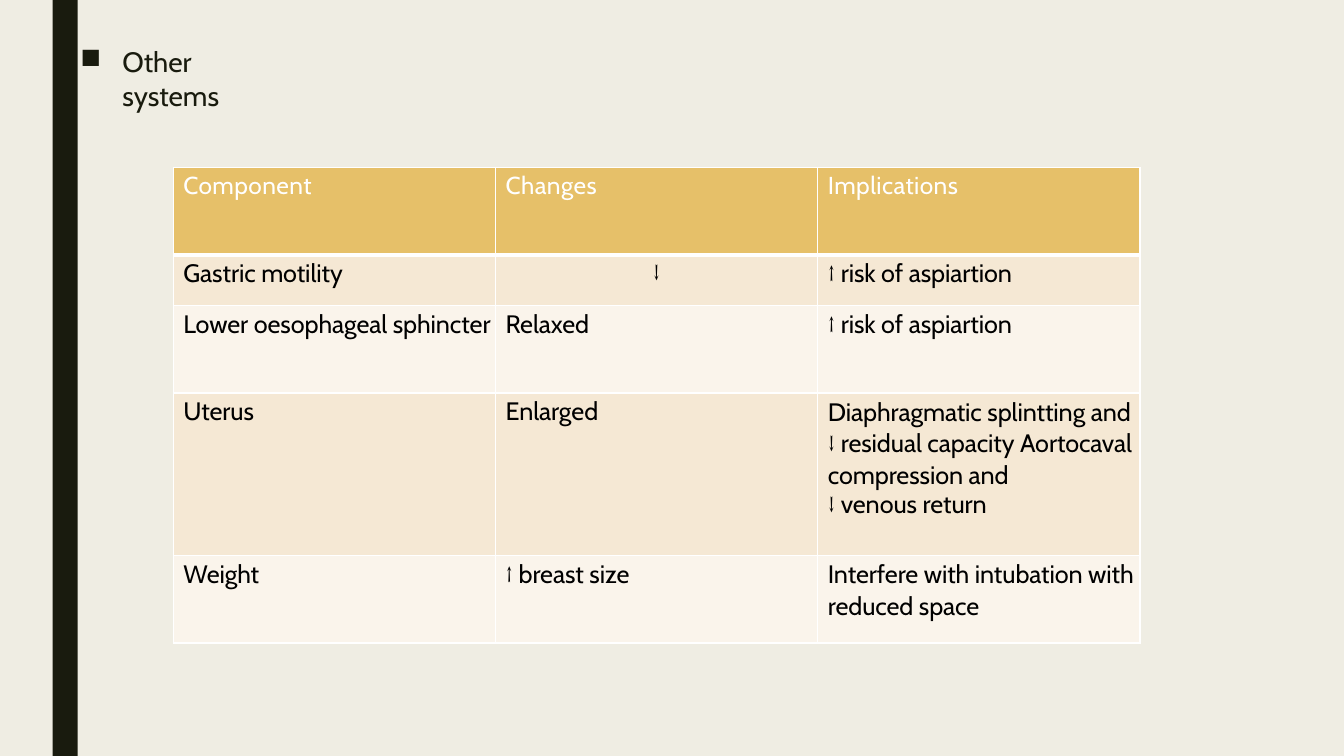
"""Build a slide with a table of changes in other body systems."""
from itertools import groupby
from lxml.etree import SubElement
from pptx import Presentation
from pptx.dml.color import RGBColor
from pptx.enum.shapes import MSO_SHAPE
from pptx.enum.text import PP_ALIGN
from pptx.oxml.ns import qn
from pptx.util import Pt

HUES = {"paper": "EFEDE3", "dark": "191B0E", "gold": "E6C069", "sand": "F5E8D4",
        "cream": "FAF4EB", "white": "FFFFFF", "black": "000000"}
ROWS = [
    ["Component", "Changes", "Implications"],
    ["Gastric motility", "↓", "↑ risk of aspiartion"],
    ["Lower oesophageal sphincter", "Relaxed", "↑ risk of aspiartion"],
    ["Uterus", "Enlarged",
     "Diaphragmatic splintting and ↓ residual capacity Aortocaval compression and\n↓ venous return"],
    ["Weight", "↑ breast size", "Interfere with intubation with reduced space"],
]
HEIGHTS = [62.6, 36, 62.6, 116, 62.6]
HEAD = {"size": Pt(17.5), "name": "Cabin"}
BODY = {"size": Pt(18), "name": "Cabin"}
TITLE = {"size": Pt(20), "name": "Cabin"}


def write(para, text, style, hue, gap):
    """Add text to a paragraph, with its arrows in Cambria."""
    for arrow, chars in groupby(text, lambda char: char in "↑↓"):
        run = para.add_run()
        run.text = "".join(chars)
        for key, value in style.items():
            setattr(run.font, key, value)
        run.font.color.rgb = RGBColor.from_string(HUES[hue])
        if arrow:
            run.font.name = "Cambria"
        run.font._element.set("spc", str(gap))


def border(cell, side, width):
    """Draw one white edge of a cell."""
    line = SubElement(cell._tc.get_or_add_tcPr(), qn("a:" + side), w=str(Pt(width)))
    SubElement(SubElement(line, qn("a:solidFill")), qn("a:srgbClr"), val=HUES["white"])


deck = Presentation()
deck.slide_width, deck.slide_height = Pt(960), Pt(540)
slide = deck.slides.add_slide(deck.slide_layouts[6])
slide.background.fill.solid()
slide.background.fill.fore_color.rgb = RGBColor.from_string(HUES["paper"])

stripe = slide.shapes.add_shape(MSO_SHAPE.RECTANGLE, Pt(37.5), 0, Pt(18), Pt(540))
stripe.shadow.inherit = False
stripe.fill.solid()
stripe.fill.fore_color.rgb = RGBColor.from_string(HUES["dark"])
stripe.line.fill.background()

title = slide.shapes.add_textbox(Pt(56.4), Pt(31), Pt(151), Pt(26)).text_frame
frame = {"word_wrap": True, "margin_left": 0, "margin_right": 0,
         "margin_top": Pt(1), "margin_bottom": 0}
for key, value in frame.items():
    setattr(title, key, value)
para = title.paragraphs[0]
para.space_before = Pt(1)
props = para._p.get_or_add_pPr()
props.set("marL", str(Pt(31)))
props.set("indent", str(Pt(-30)))
SubElement(props, qn("a:buChar"), char="■")
write(para, "Other systems", TITLE, "dark", -5)

table = slide.shapes.add_table(5, 3, Pt(123.8), Pt(119.5), Pt(690.6), Pt(339.8)).table
for col in table.columns:
    col.width = Pt(230.2)
for r, (texts, height) in enumerate(zip(ROWS, HEIGHTS)):
    table.rows[r].height = Pt(height)
    fill = "gold" if r == 0 else ("sand" if r % 2 else "cream")
    style, hue, gap = (HEAD, "white", 30) if r == 0 else (BODY, "black", -5)
    for c, text in enumerate(texts):
        cell = table.cell(r, c)
        edges = {"margin_left": 0, "margin_right": 0, "margin_top": Pt(2.5), "margin_bottom": 0}
        for key, value in edges.items():
            setattr(cell, key, value)
        for side in ("lnL", "lnR", "lnT", "lnB"):
            border(cell, side, 3 if (r, side) in ((0, "lnB"), (1, "lnT")) else 1)
        cell.fill.solid()
        cell.fill.fore_color.rgb = RGBColor.from_string(HUES[fill])
        for n, part in enumerate(text.split("\n")):
            para = cell.text_frame.add_paragraph() if n else cell.text_frame.paragraphs[0]
            para.space_before = Pt(0 if n else 2.5)
            if len(text) > 25:
                para.line_spacing = Pt(21.1) if n else 1.02
            if text == "↓":
                para.alignment = PP_ALIGN.CENTER
            else:
                para._p.get_or_add_pPr().set("marL", str(Pt(7.2)))
            write(para, part, style, hue, gap)

deck.save("out.pptx")
